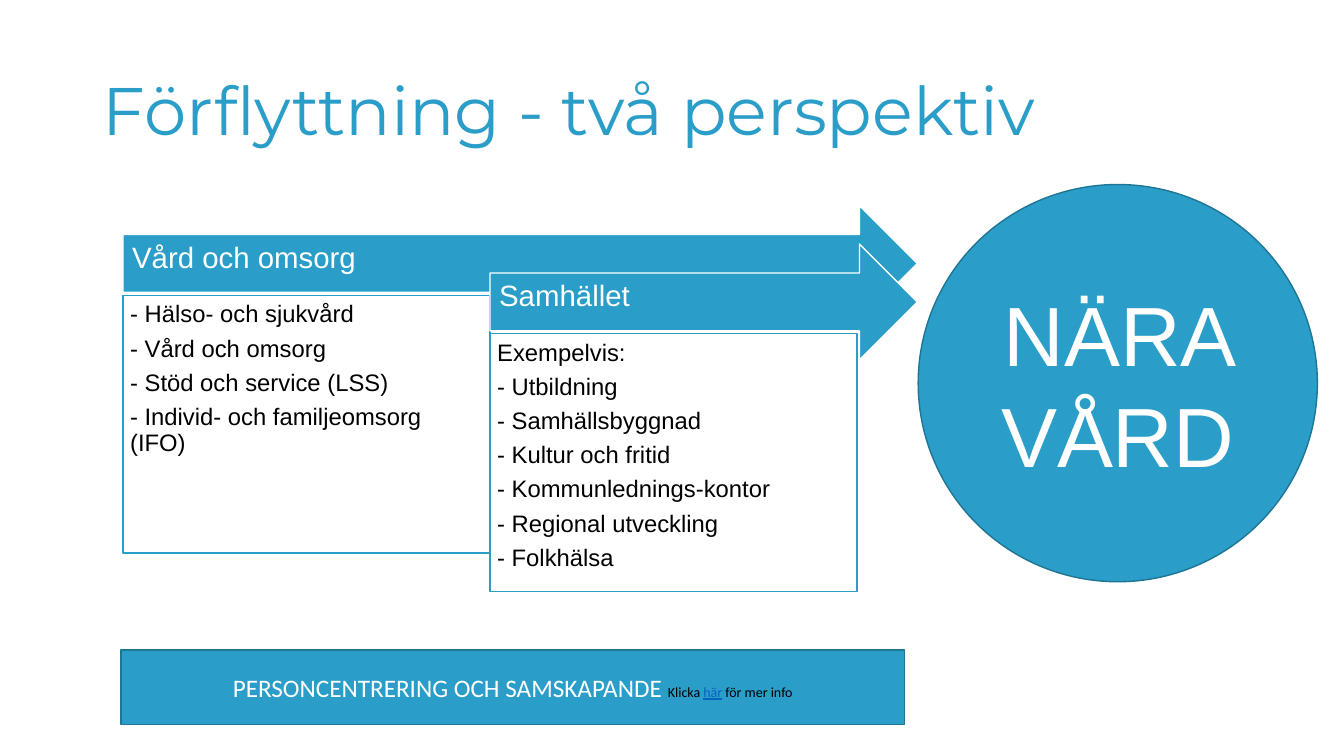
from dataclasses import dataclass

from pptx import Presentation
from pptx.dml.color import RGBColor
from pptx.enum.shapes import MSO_SHAPE
from pptx.enum.text import MSO_ANCHOR, PP_ALIGN
from pptx.util import Cm, Pt


@dataclass(frozen=True)
class Theme:
    blue: str = "2A9EC8"
    edge: str = "1F7594"
    white: str = "FFFFFF"
    black: str = "000000"
    link: str = "0563C1"
    sans: str = "Arial"
    title: int = 48
    goal: int = 60
    head: int = 21
    base: int = 18
    body: int = 17
    small: int = 10


THEME = Theme()
STEP = 0.97
CARE = [
    "- Hälso- och sjukvård",
    "- Vård och omsorg",
    "- Stöd och service (LSS)",
    "- Individ- och familjeomsorg (IFO)",
]
CIVIC = [
    "Exempelvis:",
    "- Utbildning",
    "- Samhällsbyggnad",
    "- Kultur och fritid",
    "- Kommunlednings-kontor",
    "- Regional utveckling",
    "- Folkhälsa",
]


def add_run(para, text, size=THEME.body, color=THEME.white, font=THEME.sans, under=None):
    run = para.add_run()
    run.text = text
    run.font.size = Pt(size)
    run.font.name = font
    run.font.color.rgb = RGBColor.from_string(color)
    run.font.underline = under


def set_text(shape, lines, align=PP_ALIGN.LEFT, anchor=MSO_ANCHOR.MIDDLE,
             inset=(0.25, 0.13, 0.25, 0.13), lead=1.0, after=0, **style):
    frame = shape.text_frame
    frame.word_wrap = True
    frame.vertical_anchor = anchor
    (frame.margin_left, frame.margin_top,
     frame.margin_right, frame.margin_bottom) = map(Cm, inset)
    for i, line in enumerate(lines):
        para = frame.add_paragraph() if i else frame.paragraphs[0]
        para.alignment = align
        para.line_spacing = lead
        para.space_after = Pt(after)
        runs = [(line, {})] if isinstance(line, str) else line
        for text, extra in runs:
            add_run(para, text, **{**style, **extra})


def add_form(slide, kind, area, fill, line):
    form = slide.shapes.add_shape(kind, *map(Cm, area))
    form.shadow.inherit = False
    form.fill.solid()
    form.fill.fore_color.rgb = RGBColor.from_string(fill)
    form.line.color.rgb = RGBColor.from_string(line)
    form.line.width = Pt(1)
    return form


def add_title(slide, text):
    box = slide.shapes.add_textbox(Cm(2.34), Cm(1.02), Cm(29.21), Cm(3.68))
    set_text(box, [text], lead=0.9, size=THEME.title, color=THEME.blue, font="Montserrat")


def add_view(slide, rank, head, items):
    left = 3.1 + 9.25 * rank
    drop = STEP * rank
    arrow = add_form(slide, MSO_SHAPE.RIGHT_ARROW,
                     (left, 5.18 + drop, 23.12 - left, 2.92), THEME.blue, THEME.white)
    set_text(arrow, [head], inset=(0.23, 0.23, 0.71, 0.46), lead=0.9, after=7,
             size=THEME.head)
    panel = add_form(slide, MSO_SHAPE.RECTANGLE,
                     (left, 7.44 + drop, 9.25, 6.5), THEME.white, THEME.blue)
    set_text(panel, items, anchor=MSO_ANCHOR.TOP, inset=(0.18,) * 4, lead=0.9,
             after=6, color=THEME.black)


def add_base(slide):
    bar = add_form(slide, MSO_SHAPE.RECTANGLE, (3.05, 16.38, 19.74, 1.88),
                   THEME.blue, THEME.edge)
    note = {"size": THEME.small, "color": THEME.black}
    line = [
        ("PERSONCENTRERING OCH SAMSKAPANDE ", {}),
        ("Klicka ", note),
        ("här", {**note, "color": THEME.link, "under": True}),
        (" för mer info", note),
    ]
    set_text(bar, [line], align=PP_ALIGN.CENTER, size=THEME.base, font="Calibri")


def add_goal(slide, text):
    disc = add_form(slide, MSO_SHAPE.OVAL, (23.14, 4.65, 10.06, 10.01),
                    THEME.blue, THEME.edge)
    set_text(disc, [text], align=PP_ALIGN.CENTER, size=THEME.goal)


def main():
    deck = Presentation()
    deck.slide_width, deck.slide_height = Cm(33.87), Cm(19.05)
    slide = deck.slides.add_slide(deck.slide_layouts[6])
    add_title(slide, "Förflyttning - två perspektiv")
    views = [("Vård och omsorg", CARE), ("Samhället", CIVIC)]
    for rank, (head, items) in enumerate(views):
        add_view(slide, rank, head, items)
    add_base(slide)
    add_goal(slide, "NÄRA VÅRD")
    deck.save("out.pptx")


if __name__ == "__main__":
    main()
